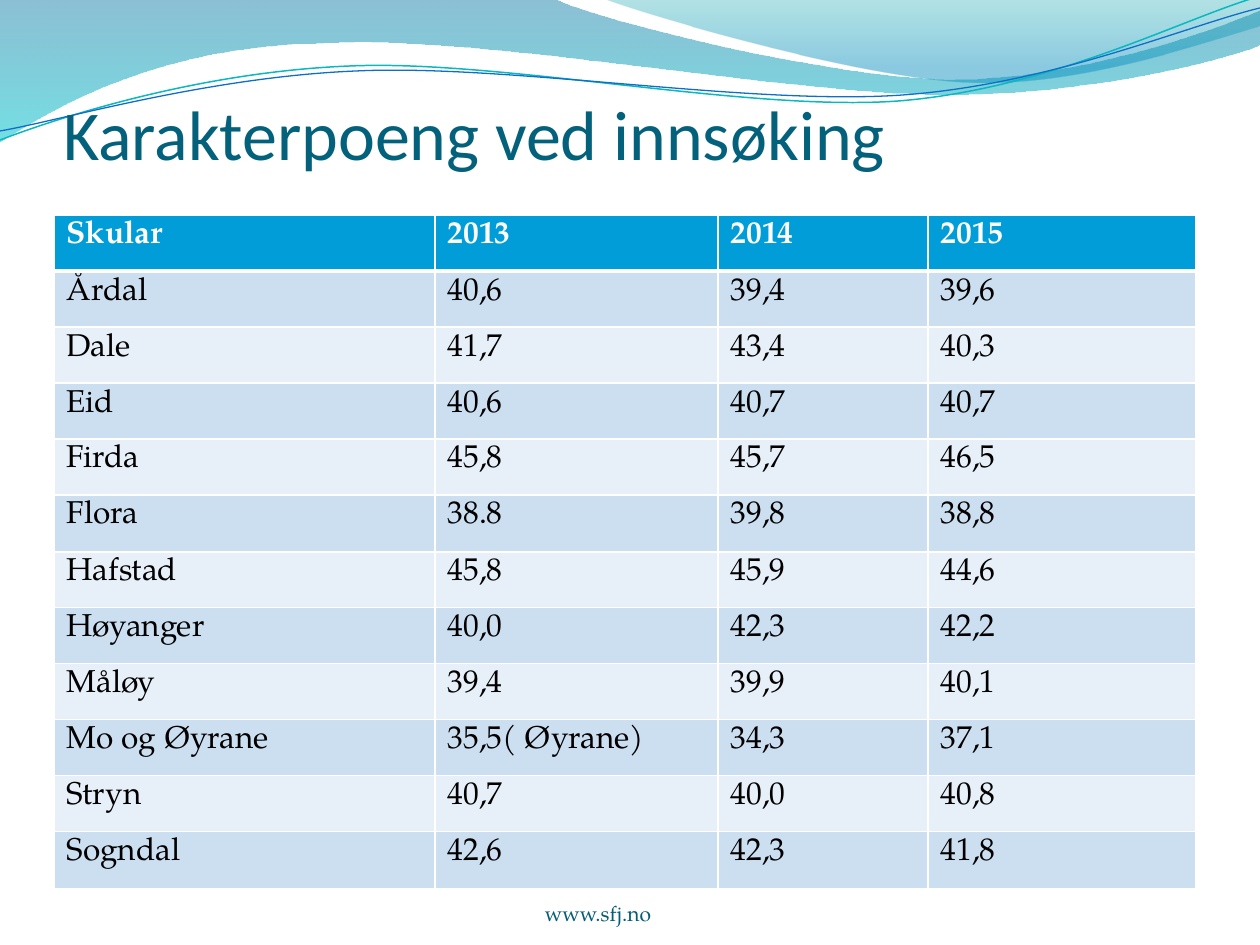
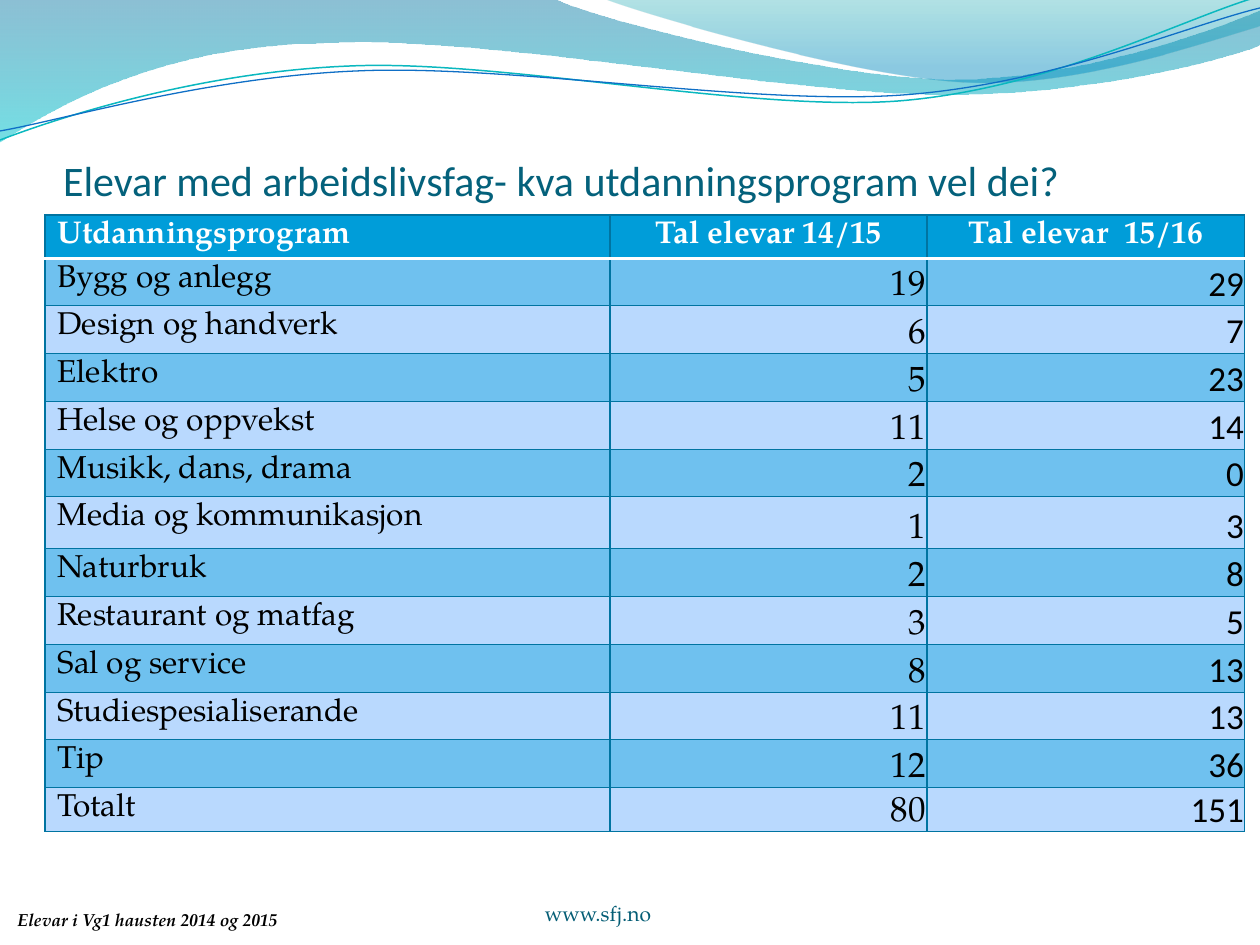
from dataclasses import dataclass

from lxml import etree
from pptx import Presentation
from pptx import util as u
from pptx.dml.color import RGBColor
from pptx.enum import text as t
from pptx.oxml import ns

PX = u.Inches(1) / 126


@dataclass(frozen=True)
class Theme:
    heading: str = "04617B"
    footer: str = "045D75"
    ink: str = "000000"
    white: str = "FFFFFF"
    header: str = "009DD9"
    grid: str = "0074A1"
    pale_bands: tuple = ("CCDFF1", "E7EFF8")
    strong_bands: tuple = ("6FC1EF", "B9D9FE")
    sans: str = "Calibri"
    serif: str = "TeX Gyre Pagella"
    cell_size: int = 18
    number_size: int = 20
    footer_size: int = 12
    caption_size: int = 10


theme = Theme()


def px(*lengths):
    return [u.Emu(round(length * PX)) for length in lengths]


def write(frame, string, size, font, color, align=t.PP_ALIGN.LEFT, bold=False, italic=False):
    para = frame.paragraphs[0]
    para.alignment = align
    span = para.add_run()
    span.text = string
    span.font.size = u.Pt(size)
    span.font.name = font
    span.font.bold = bold
    span.font.italic = italic
    span.font.color.rgb = RGBColor.from_string(color)


# Wave outlines: two numbers make a straight step, six make a Bézier curve
bands = [
    ([(0, 0), (554, -1), (600, 21, 837, 79, 955, 79), (1075, 79, 1207, 33, 1260, 11),
      (1261, 45), (1239, 55, 1096, 96, 940, 94), (784, 94, 481, 35, 324, 43),
      (163, 45, 58, 105, -1, 142), (0, 0)],
     [(0, "0074A1", 45), (1, "00C6CF", 55)], None),
    ([(604, -1), (641, 14, 859, 78, 969, 82), (1079, 87, 1211, 40, 1260, 26), (1260, 0),
      (604, -1)],
     [(0, "00A1A9", 30), (0.8, "008BBF", 45)], None),
    ([(0, 140), (60, 117, 199, 72, 349, 66), (498, 59, 747, 112, 898, 101),
      (1050, 89, 1182, 19, 1257, -3)],
     None, ("0AB8BF", 0.85)),
    ([(0, 131), (59, 121, 207, 77, 357, 71), (508, 64, 752, 106, 903, 95),
      (1053, 84, 1186, 26, 1260, 8)],
     None, ("0F6FC6", 0.75)),
]

schools = [
    ("Skular", "2013", "2014", "2015"),
    ("Årdal", "40,6", "39,4", "39,6"),
    ("Dale", "41,7", "43,4", "40,3"),
    ("Eid", "40,6", "40,7", "40,7"),
    ("Firda", "45,8", "45,7", "46,5"),
    ("Flora", "38.8", "39,8", "38,8"),
    ("Hafstad", "45,8", "45,9", "44,6"),
    ("Høyanger", "40,0", "42,3", "42,2"),
    ("Måløy", "39,4", "39,9", "40,1"),
    ("Mo og Øyrane", "35,5( Øyrane)", "34,3", "37,1"),
    ("Stryn", "40,7", "40,0", "40,8"),
    ("Sogndal", "42,6", "42,3", "41,8"),
]

programmes = [
    ("Utdanningsprogram", "Tal elevar 14/15", "Tal elevar  15/16"),
    ("Bygg og anlegg", "19", "29"),
    ("Design og handverk", "6", "7"),
    ("Elektro", "5", "23"),
    ("Helse og oppvekst", "11", "14"),
    ("Musikk, dans, drama", "2", "0"),
    ("Media og kommunikasjon", "1", "3"),
    ("Naturbruk", "2", "8"),
    ("Restaurant og matfag", "3", "5"),
    ("Sal og service", "8", "13"),
    ("Studiespesialiserande", "11", "13"),
    ("Tip", "12", "36"),
    ("Totalt", "80", "151"),
]

pages = [
    dict(title="Karakterpoeng ved innsøking", title_size=40, title_height=79,
         rows=schools, left=54, columns=[381, 283, 210, 268], heights=([56] * 5 + [57]) * 2,
         fills=theme.pale_bands, border=(theme.white, 1), header_rule=3,
         counts=False, caption=None),
    dict(title="Elevar med arbeidslivsfag- kva utdanningsprogram vel dei?",
         title_size=24, title_height=109,
         rows=programmes, left=45, columns=[565, 317, 318],
         heights=[43, 47] + [48] * 3 + [47, 52] + [48] * 3 + [47, 48, 44],
         fills=theme.strong_bands, border=(theme.grid, 0.75), header_rule=2,
         counts=True, caption="Elevar i Vg1 hausten 2014 og 2015"),
]

deck = Presentation()
deck.slide_width, deck.slide_height = px(1260, 945)
layout = deck.slide_layouts[5]

for number, content in enumerate(pages):
    page = deck.slides.add_slide(layout)

    # Waves are drawn once and moved to the shared layout
    for outline, gradient, stroke in bands if number == 0 else []:
        builder = page.shapes.build_freeform(*px(*outline[0]))
        builder.add_line_segments([px(*step[-2:]) for step in outline[1:]], close=bool(gradient))
        wave = builder.convert_to_shape()
        wave.shadow.inherit = False

        # Bend the steps that have control points
        for node, step in zip(list(wave.element.iter(ns.qn("a:lnTo"))), outline[1:]):
            if len(step) == 6:
                node.tag = ns.qn("a:cubicBezTo")
                controls = px(*step[:4])
                for index in (0, 1):
                    x, y = controls[2 * index:2 * index + 2]
                    control = etree.Element(ns.qn("a:pt"), x=str(x - wave.left), y=str(y - wave.top))
                    node.insert(index, control)

        if gradient:
            wave.line.fill.background()
            wave.fill.gradient()
            wave.fill.gradient_angle = 270
            for stop, (position, color, _) in zip(wave.fill.gradient_stops, gradient):
                stop.position = position
                stop.color.rgb = RGBColor.from_string(color)
            for node, (_, _, opacity) in zip(wave.element.iter(ns.qn("a:srgbClr")), gradient):
                etree.SubElement(node, ns.qn("a:alpha"), val=str(opacity * 1000))
        else:
            wave.fill.background()
            wave.line.color.rgb = RGBColor.from_string(stroke[0])
            wave.line.width = u.Pt(stroke[1])
        layout.shapes.element.append(wave.element)

    # Title
    title = page.shapes.title
    title.left, title.top, title.width, title.height = px(63, 96, 1134, content["title_height"])
    frame = title.text_frame
    frame.margin_left, frame.margin_top, frame.margin_right, frame.margin_bottom = px(0, 6, 0, 0)
    frame.vertical_anchor = t.MSO_ANCHOR.BOTTOM
    frame.word_wrap = True
    frame.auto_size = t.MSO_AUTO_SIZE.NONE
    write(frame, content["title"], content["title_size"], theme.sans, theme.heading)

    # Table
    rows, columns, heights = content["rows"], content["columns"], content["heights"]
    table = page.shapes.add_table(
        len(rows), len(columns),
        *px(content["left"], 215, sum(columns), sum(heights))).table
    table.horz_banding = False
    for column, width in zip(table.columns, columns):
        column.width = px(width)[0]
    for row, height in zip(table.rows, heights):
        row.height = px(height)[0]

    for r, values in enumerate(rows):
        for c, value in enumerate(values):
            cell = table.cell(r, c)
            is_header = r == 0
            is_count = content["counts"] and c > 0

            # Borders, with a heavier white rule under the header
            properties = cell._tc.get_or_add_tcPr()
            for side in "LRTB":
                under_header = (r, side) in ((0, "B"), (1, "T"))
                color, width = ((theme.white, content["header_rule"]) if under_header
                                else content["border"])
                line = etree.SubElement(properties, ns.qn("a:ln" + side), w=str(u.Pt(width)))
                paint = etree.SubElement(line, ns.qn("a:solidFill"))
                etree.SubElement(paint, ns.qn("a:srgbClr"), val=color)

            cell.fill.solid()
            cell.fill.fore_color.rgb = RGBColor.from_string(
                theme.header if is_header else content["fills"][(r - 1) % 2])

            if is_header:
                align = t.PP_ALIGN.CENTER if is_count else t.PP_ALIGN.LEFT
                write(cell.text_frame, value, theme.cell_size, theme.serif, theme.white,
                      align, bold=True)
            elif is_count:
                cell.vertical_anchor = t.MSO_ANCHOR.BOTTOM
                cell.margin_left, cell.margin_top, cell.margin_right, cell.margin_bottom = px(1, 1, 1, 0)
                write(cell.text_frame, value, theme.number_size,
                      theme.sans if c == 2 else theme.serif, theme.ink, t.PP_ALIGN.RIGHT)
            else:
                write(cell.text_frame, value, theme.cell_size, theme.serif, theme.ink)

    # Footer
    frame = page.shapes.add_textbox(*px(367, 876, 462, 50)).text_frame
    frame.margin_left = frame.margin_top = frame.margin_right = frame.margin_bottom = 0
    frame.vertical_anchor = t.MSO_ANCHOR.BOTTOM
    frame.word_wrap = True
    write(frame, "www.sfj.no", theme.footer_size, theme.serif, theme.footer, t.PP_ALIGN.CENTER)

    # Caption
    if content["caption"]:
        frame = page.shapes.add_textbox(*px(5, 839, 307, 97)).text_frame
        frame.vertical_anchor = t.MSO_ANCHOR.BOTTOM
        frame.word_wrap = True
        write(frame, content["caption"], theme.caption_size, theme.serif, theme.ink,
              bold=True, italic=True)

deck.save("out.pptx")
